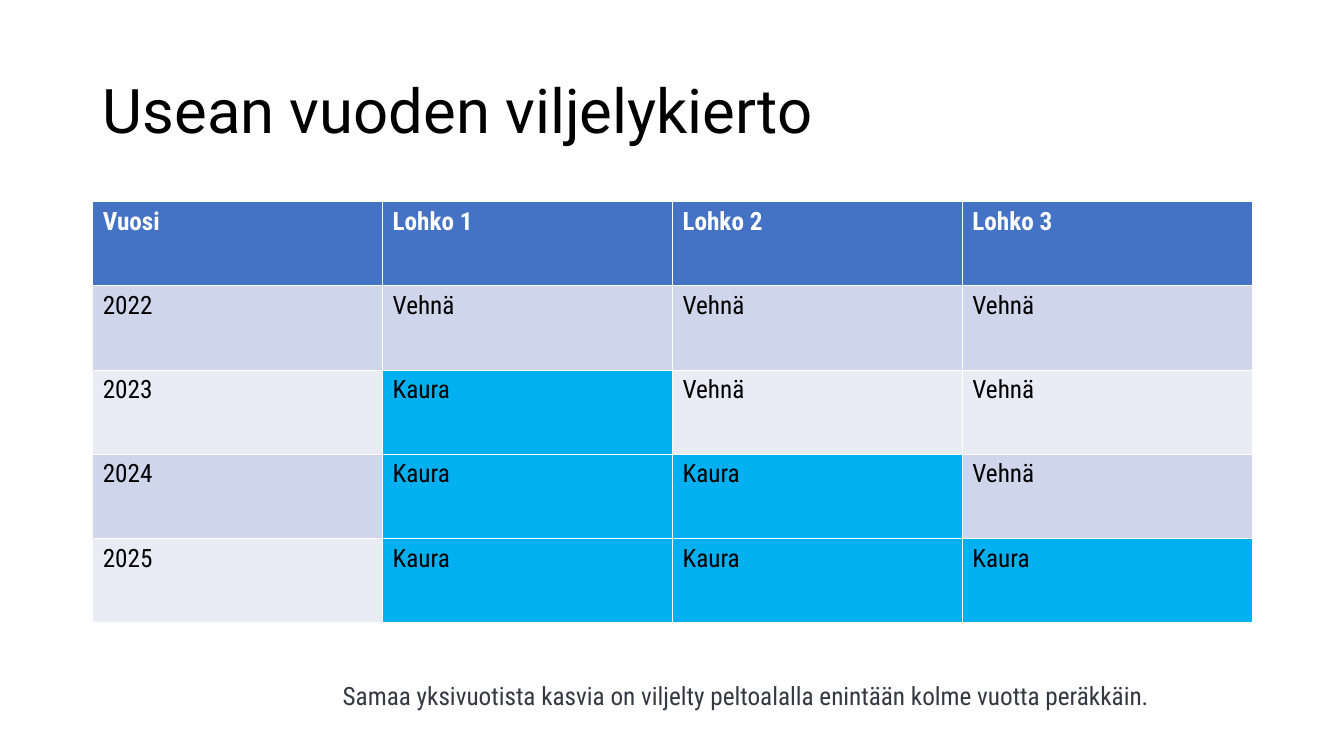
from pptx import Presentation
from pptx.dml.color import RGBColor
from pptx.enum.text import MSO_ANCHOR, MSO_AUTO_SIZE, PP_ALIGN
from pptx.util import Inches, Pt

BLACK = RGBColor(0x00, 0x00, 0x00)
WHITE = RGBColor(0xFF, 0xFF, 0xFF)
SLATE = RGBColor(0x34, 0x38, 0x41)
HEADER_BLUE = RGBColor(0x44, 0x72, 0xC4)
BAND_DARK = RGBColor(0xCF, 0xD5, 0xEA)
BAND_LIGHT = RGBColor(0xE9, 0xEB, 0xF5)
OAT_BLUE = RGBColor(0x00, 0xB0, 0xF0)

PLOTS = 3
FIRST_YEAR = 2022
YEARS = 4
WHEAT, OATS = "Vehnä", "Kaura"


class RotationPage:
    title_font = "Roboto"
    body_font = "Roboto Condensed"
    body_size = 18

    def __init__(self, deck):
        self.width, self.height = deck.slide_width, deck.slide_height
        self.page = deck.slides.add_slide(deck.slide_layouts[5])

    def area(self, left, top, width, height):
        return (
            round(self.width * left / 100),
            round(self.height * top / 100),
            round(self.width * width / 100),
            round(self.height * height / 100),
        )

    def style(self, para, name, size, color, bold=False):
        para.alignment = PP_ALIGN.LEFT
        para.font.name = name
        para.font.size = Pt(size)
        para.font.bold = bold
        para.font.color.rgb = color

    def title(self, text, *share):
        box = self.page.shapes.title
        box.left, box.top, box.width, box.height = self.area(*share)
        frame = box.text_frame
        frame.text = text
        frame.vertical_anchor = MSO_ANCHOR.MIDDLE
        frame.auto_size = MSO_AUTO_SIZE.NONE
        para = frame.paragraphs[0]
        para.line_spacing = 0.9
        self.style(para, self.title_font, 44, BLACK)

    def caption(self, text, *share):
        frame = self.page.shapes.add_textbox(*self.area(*share)).text_frame
        frame.word_wrap = True
        frame.auto_size = MSO_AUTO_SIZE.SHAPE_TO_FIT_TEXT
        frame.text = text
        self.style(frame.paragraphs[0], self.body_font, self.body_size, SLATE)

    def table(self, rows, *share):
        shape = self.page.shapes.add_table(len(rows), len(rows[0]), *self.area(*share))
        for row, texts in enumerate(rows):
            for column, text in enumerate(texts):
                cell = shape.table.cell(row, column)
                cell.text = text
                cell.fill.solid()
                cell.fill.fore_color.rgb = self.cell_color(row, text)
                self.style(
                    cell.text_frame.paragraphs[0],
                    self.body_font,
                    self.body_size,
                    BLACK if row else WHITE,
                    bold=row == 0,
                )

    def cell_color(self, row, text):
        if row == 0:
            return HEADER_BLUE
        if text == OATS:
            return OAT_BLUE
        return BAND_DARK if row % 2 else BAND_LIGHT


def main():
    deck = Presentation()
    deck.slide_width, deck.slide_height = Inches(13.33), Inches(7.5)

    plots = range(1, PLOTS + 1)
    rows = [["Vuosi"] + [f"Lohko {plot}" for plot in plots]]
    for season in range(YEARS):
        crops = [OATS if plot <= season else WHEAT for plot in plots]
        rows.append([str(FIRST_YEAR + season)] + crops)

    rotation = RotationPage(deck)
    rotation.title("Usean vuoden viljelykierto", 6.9, 5.33, 86.27, 19.33)
    rotation.caption(
        "Samaa yksivuotista kasvia on viljelty peltoalalla enintään kolme vuotta peräkkäin.",
        24.76, 89.33, 70, 5.33,
    )
    rotation.table(rows, 6.9, 26.67, 86.27, 55.73)
    deck.save("out.pptx")


if __name__ == "__main__":
    main()
